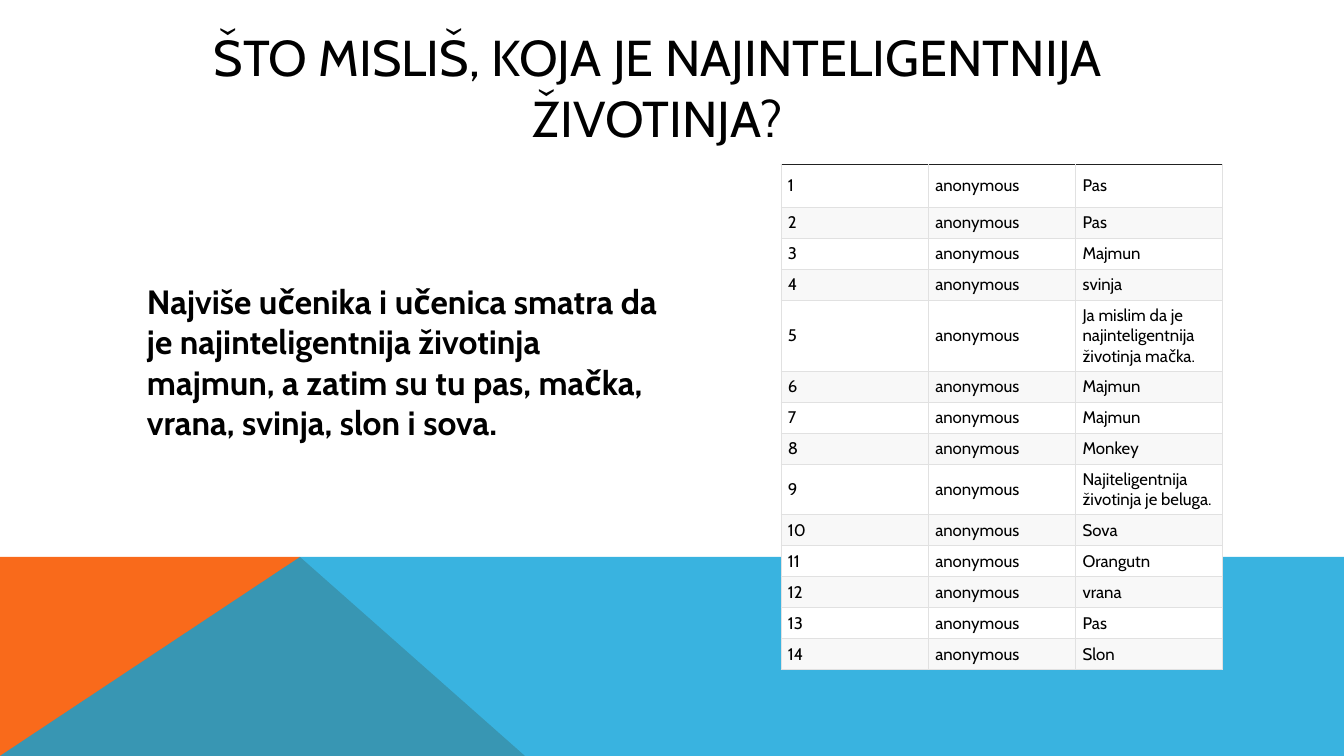
from lxml.etree import SubElement
from pptx import Presentation
from pptx.dml.color import RGBColor
from pptx.enum.text import MSO_ANCHOR, PP_ALIGN
from pptx.oxml.ns import qn
from pptx.util import Emu, Pt

PX = 914400 / 100.8
FONT = "Cabin"
BLACK = RGBColor(0x00, 0x00, 0x00)
WHITE = RGBColor(0xFF, 0xFF, 0xFF)
BAND = RGBColor(0xF8, 0xF8, 0xF8)
GRID = RGBColor(0xE1, 0xE1, 0xE1)
TOP_RULE = RGBColor(0x21, 0x21, 0x21)
ORANGE = RGBColor(0xF9, 0x6A, 0x1B)
BLUE = RGBColor(0x08, 0xA1, 0xD9)


def px(n):
    return Emu(round(n * PX))


def write(tf, text, size, bold=False):
    """Put one run of text in a frame and return its paragraph."""
    p = tf.paragraphs[0]
    r = p.add_run()
    r.text = text
    for name, value in {"name": FONT, "size": Pt(size), "bold": bold}.items():
        setattr(r.font, name, value)
    r.font.color.rgb = BLACK
    return p


prs = Presentation()
prs.slide_width, prs.slide_height = px(1344), px(756)
s = prs.slides.add_slide(prs.slide_layouts[6])

# Coloured footer: the translucent blue overlaps the orange triangle
footer = [
    (ORANGE, 100, [(0, 756), (0, 557), (300, 557), (525, 756)]),
    (BLUE, 80, [(0, 756), (300, 557), (1344, 557), (1344, 756)]),
]
for color, opacity, points in footer:
    builder = s.shapes.build_freeform(*points[0], scale=PX)
    builder.add_line_segments(points[1:], close=True)
    sp = builder.convert_to_shape()
    sp.shadow.inherit = False
    sp.line.fill.background()
    sp.fill.solid()
    sp.fill.fore_color.rgb = color
    if opacity < 100:
        srgb = sp.fill._xPr.find(".//" + qn("a:srgbClr"))
        SubElement(srgb, qn("a:alpha"), val=str(opacity * 1000))

# Title
tf = s.shapes.add_textbox(px(105), px(23), px(1106), px(128)).text_frame
tf.word_wrap = True
tf.vertical_anchor = MSO_ANCHOR.MIDDLE
p = write(tf, "ŠTO MISLIŠ, KOJA JE NAJINTELIGENTNIJA ŽIVOTINJA?", 36)
p.alignment = PP_ALIGN.CENTER

# Conclusion
tf = s.shapes.add_textbox(px(99), px(276), px(572), px(173)).text_frame
tf.word_wrap = True
p = write(tf, "Najviše učenika i učenica smatra da je najinteligentnija životinja majmun, "
              "a zatim su tu pas, mačka, vrana, svinja, slon i sova.", 24, bold=True)
p._p.get_or_add_pPr().set("marL", str(px(38)))

# Answers
answers = [
    "Pas", "Pas", "Majmun", "svinja", "Ja mislim da je najinteligentnija životinja mačka.",
    "Majmun", "Majmun", "Monkey", "Najiteligentnija životinja je beluga.", "Sova",
    "Orangutn", "vrana", "Pas", "Slon",
]
tall_rows = {0: 43, 4: 71, 8: 51}
heights = [tall_rows.get(i, 31) for i in range(len(answers))]
frame = s.shapes.add_table(len(answers), 3, px(781), px(164), px(442), px(sum(heights)))
table = frame.table
table.first_row = table.horz_banding = False
for column in table.columns:
    column.width = Emu(px(442) // 3)

cell_format = {
    "margin_left": px(7), "margin_right": px(7),
    "margin_top": px(5), "margin_bottom": px(5),
    "vertical_anchor": MSO_ANCHOR.MIDDLE,
}
for i, answer in enumerate(answers):
    table.rows[i].height = px(heights[i])
    for j, text in enumerate([str(i + 1), "anonymous", answer]):
        cell = table.cell(i, j)
        for name, value in cell_format.items():
            setattr(cell, name, value)
        write(cell.text_frame, text, 12)
        tcPr = cell._tc.get_or_add_tcPr()
        for side in "LRTB":
            color = TOP_RULE if side == "T" and i == 0 else GRID
            ln = SubElement(tcPr, qn(f"a:ln{side}"), w=str(Pt(0.75)))
            fill = SubElement(ln, qn("a:solidFill"))
            SubElement(fill, qn("a:srgbClr"), val=str(color))
        cell.fill.solid()
        cell.fill.fore_color.rgb = BAND if i % 2 else WHITE

prs.save("out.pptx")
